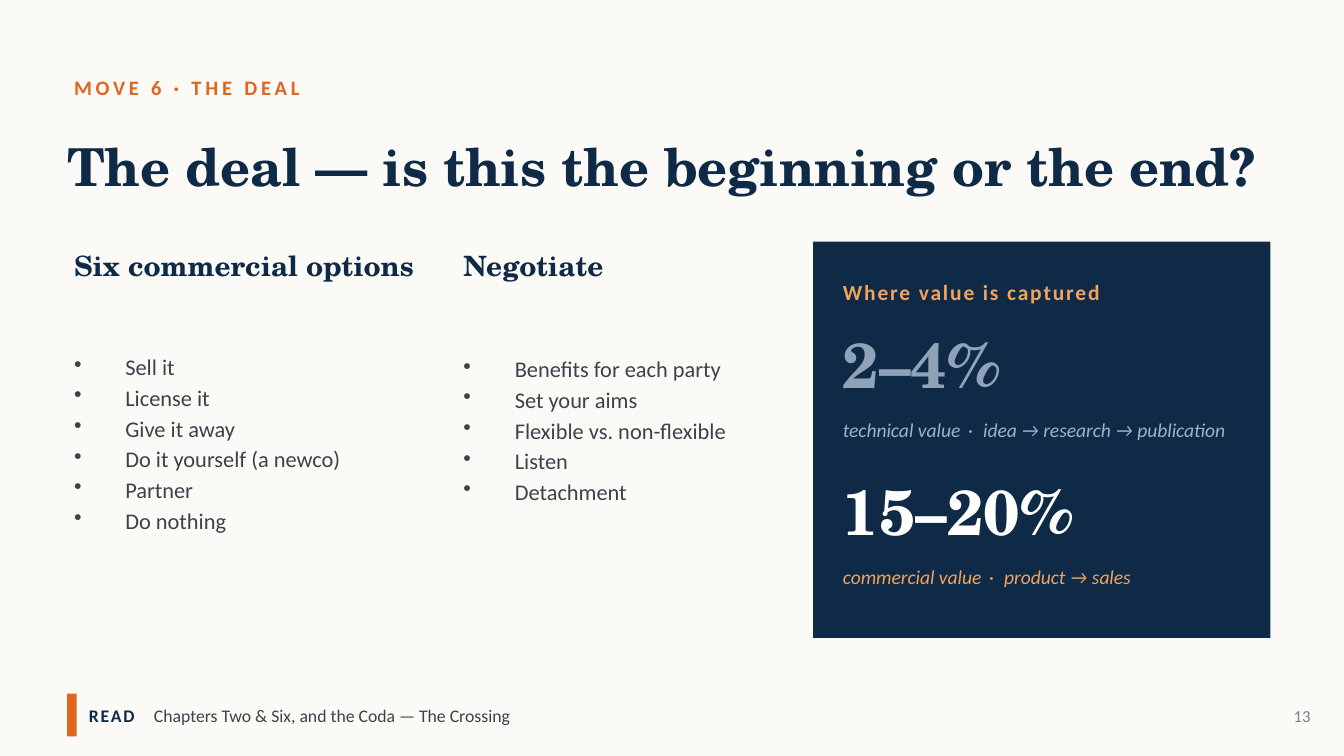
import pptx
import pptx.dml.color
import pptx.enum.shapes
import pptx.enum.text
import pptx.oxml
import pptx.oxml.ns
import pptx.util
from pptx.util import Cm

COLORS = {
    "paper": "FBFAF7", "navy": "0E2A47", "orange": "E0661F", "peach": "F0A35E",
    "ink": "3C424A", "steel": "8FA2B8", "mist": "9FB1C6", "white": "FFFFFF",
    "gray": "7A828B",
}
SERIF, SANS = "TeX Gyre Schola", "Calibri"
ALIGN = pptx.enum.text.PP_ALIGN


def rgb(name):
    return pptx.dml.color.RGBColor.from_string(COLORS[name])


class DealSlide:
    """Holds the style and the current slide."""

    def __init__(self, deck):
        self.page = deck.slides.add_slide(deck.slide_layouts[5])
        fill = self.page.background.fill
        fill.solid()
        fill.fore_color.rgb = rgb("paper")

    def frame(self, box, inset=0):
        frame = box.text_frame
        frame.word_wrap = True
        frame.auto_size = pptx.enum.text.MSO_AUTO_SIZE.NONE
        frame.vertical_anchor = pptx.enum.text.MSO_ANCHOR.MIDDLE
        frame.margin_left = frame.margin_right = Cm(inset)
        frame.margin_top = frame.margin_bottom = Cm(inset / 2)
        return frame

    def span(self, para, text, size, color, font=SANS, bold=False, italic=False, spacing=0):
        span = para.add_run()
        span.text = text
        span.font.name = font
        span.font.size = pptx.util.Pt(size)
        span.font.bold = bold
        span.font.italic = italic
        span.font.color.rgb = rgb(color)
        if spacing:
            span.font._element.set("spc", str(round(spacing * 100)))

    def title(self, text, left, top, width, height):
        box = self.page.shapes.title
        box.left, box.top, box.width, box.height = map(Cm, (left, top, width, height))
        para = self.frame(box).paragraphs[0]
        para.alignment = ALIGN.LEFT
        para.line_spacing = pptx.util.Pt(28.6)
        self.span(para, text, 28, "navy", SERIF, bold=True)

    def box(self, left, top, width, height, inset=0):
        box = self.page.shapes.add_textbox(*map(Cm, (left, top, width, height)))
        return self.frame(box, inset)

    def label(self, text, left, top, width, height, size, color, **style):
        para = self.box(left, top, width, height).paragraphs[0]
        self.span(para, text, size, color, **style)

    def caption(self, name, detail, left, top, color):
        para = self.box(left, top, 7.62, 0.89).paragraphs[0]
        for text, spacing in ((name, 0), (" · ", 1.6), (detail, 0)):
            self.span(para, text, 10.5, color, italic=True, spacing=spacing)

    def bullets(self, items, left, top, width, height):
        frame = self.box(left, top, width, height)
        for index, item in enumerate(items):
            para = frame.add_paragraph() if index else frame.paragraphs[0]
            para.space_after = pptx.util.Pt(2)
            props = para._p.get_or_add_pPr()
            props.set("marL", str(Cm(0.97)))
            props.set("indent", str(-Cm(0.97)))
            bullet = pptx.oxml.parse_xml(
                f'<a:buChar {pptx.oxml.ns.nsdecls("a")} char="•"/>')
            props.append(bullet)
            self.span(para, item, 12, "ink")

    def block(self, left, top, width, height, color):
        shape = self.page.shapes.add_shape(
            pptx.enum.shapes.MSO_SHAPE.RECTANGLE, *map(Cm, (left, top, width, height)))
        shape.shadow.inherit = False
        shape.fill.solid()
        shape.fill.fore_color.rgb = rgb(color)
        shape.line.fill.background()

    def reading(self, tag, text, left, top, width, height):
        para = self.box(left, top, width, height).paragraphs[0]
        para._p.get_or_add_pPr().append(pptx.oxml.parse_xml(
            f'<a:tabLst {pptx.oxml.ns.nsdecls("a")}>'
            f'<a:tab pos="{Cm(1.23)}" algn="l"/></a:tabLst>'))
        self.span(para, tag, 9.5, "navy", bold=True, spacing=1)
        self.span(para, "\t" + text, 9.5, "ink")

    def page_number(self, text, left, top, width, height):
        para = self.box(left, top, width, height, inset=0.25).paragraphs[0]
        para.alignment = ALIGN.RIGHT
        self.span(para, text, 9, "gray")


def main():
    deck = pptx.Presentation()
    deck.slide_width, deck.slide_height = Cm(25.4), Cm(14.29)
    slide = DealSlide(deck)

    # Heading
    slide.label("MOVE 6 · THE DEAL", 1.4, 1.27, 15.24, 0.76, 11, "orange",
                bold=True, spacing=2)
    slide.title("The deal — is this the beginning or the end?", 1.27, 2.08, 22.86, 2.29)

    # Two bulleted columns
    columns = [
        ("Six commercial options", 1.4, 10.92, 6.86, 5.59,
         ["Sell it", "License it", "Give it away", "Do it yourself (a newco)",
          "Partner", "Do nothing"]),
        ("Negotiate", 8.76, 5.84, 5.84, 5.08,
         ["Benefits for each party", "Set your aims", "Flexible vs. non-flexible",
          "Listen", "Detachment"]),
    ]
    for heading, left, heading_width, width, height, items in columns:
        slide.label(heading, left, 4.57, heading_width, 0.89, 15, "navy",
                    font=SERIF, bold=True)
        slide.bullets(items, left, 5.59, width, height)

    # Value panel
    slide.block(15.37, 4.57, 8.64, 7.49, "navy")
    panel_left = 15.93
    slide.label("Where value is captured", panel_left, 5.08, 7.62, 0.89, 11.5, "peach",
                bold=True, spacing=1)
    values = [
        ("2–4%", "steel", "technical value", "idea → research → publication", "mist"),
        ("15–20%", "white", "commercial value", "product → sales", "peach"),
    ]
    for index, (figure, figure_color, name, detail, color) in enumerate(values):
        top = 6.1 + index * 2.79
        slide.label(figure, panel_left, top, 7.62, 1.52, 34, figure_color,
                    font=SERIF, bold=True)
        slide.caption(name, detail, panel_left, top + 1.57, color)

    # Footer
    slide.block(1.27, 13.11, 0.18, 0.81, "orange")
    slide.reading("READ", "Chapters Two & Six, and the Coda — The Crossing",
                  1.68, 13.03, 15.75, 0.97)
    slide.page_number("13", 23.75, 13.16, 1.27, 0.76)

    deck.save("out.pptx")


if __name__ == "__main__":
    main()
